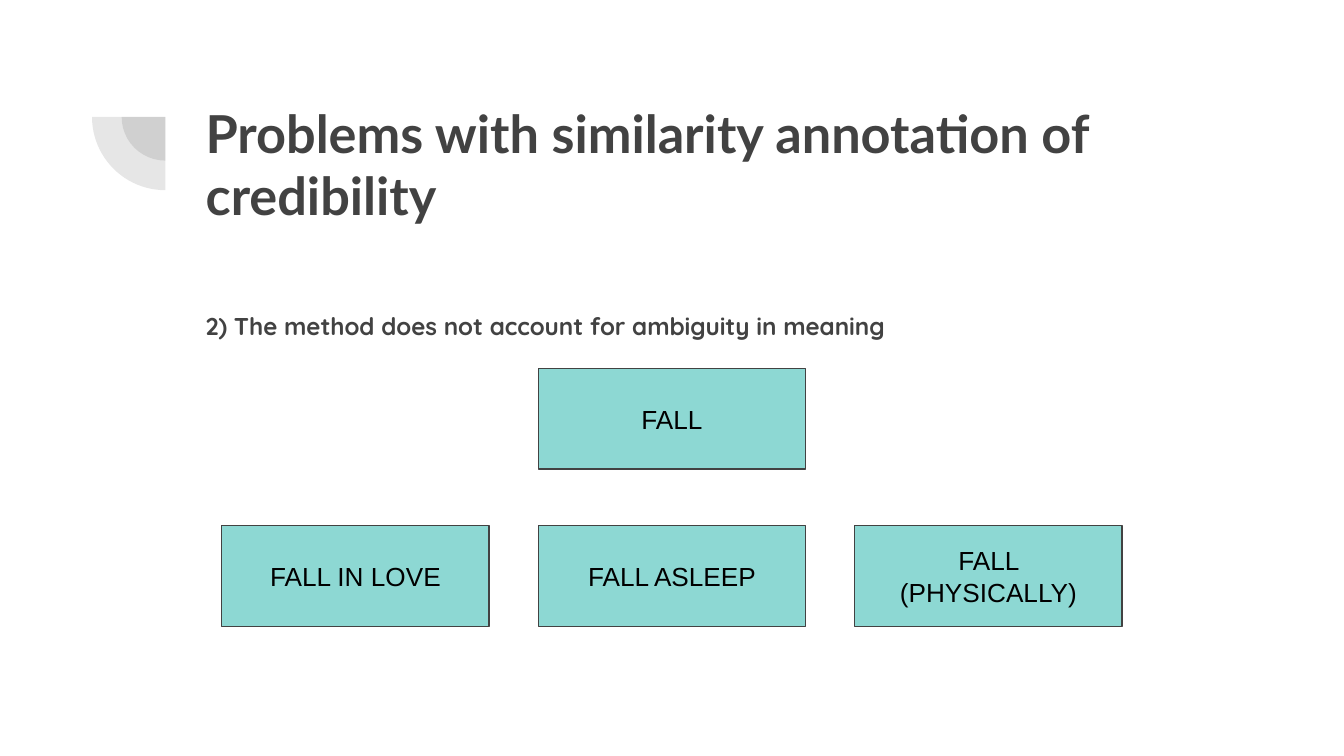
from pptx import Presentation
from pptx.dml.color import RGBColor
from pptx.enum.shapes import MSO_SHAPE as Shape
from pptx.enum.text import MSO_ANCHOR as Anchor, MSO_AUTO_SIZE as Fit, PP_ALIGN as Align
from pptx.oxml.ns import qn
from pptx.util import Inches, Pt
from lxml.etree import SubElement

TITLE = "Problems with similarity annotation of credibility"
POINT = "2) The method does not account for ambiguity in meaning"
WORD = "FALL"
SENSES = ["FALL IN LOVE", "FALL ASLEEP", "FALL (PHYSICALLY)"]

DARK, TEAL = "424242", "8DD8D3"
HEAD = {"name": "Lato", "size": Pt(28), "bold": True}
BODY = {"name": "Quicksand", "size": Pt(13), "bold": True}
LABEL = {"name": "Arial", "size": Pt(14)}

PAGE_W = 10
PAGE_H = PAGE_W * 9 / 16
LEFT, WIDTH = 1.43, 7.69
BOX_W, BOX_H = 1.99, 0.75
FIRST_X, LAST_X = 1.65, 6.36
STEP = (LAST_X - FIRST_X) / (len(SENSES) - 1)
WORD_Y, SENSE_Y = 2.74, 3.91
HUB_X, HUB_Y = 1.23, 0.87
PIES = [0.65, 1.09]


def paint(target, color):
    target.rgb = RGBColor.from_string(color)


def write(shape, text, font, color, align=Align.LEFT, anchor=Anchor.TOP):
    frame = shape.text_frame
    frame.text = text
    layout = {"word_wrap": True, "auto_size": Fit.NONE, "vertical_anchor": anchor}
    layout |= {f"margin_{side}": Inches(0.1) for side in ("left", "right", "top", "bottom")}
    for key, value in layout.items():
        setattr(frame, key, value)
    par = frame.paragraphs[0]
    par.alignment = align
    par.space_before = Pt(0)
    run = par.runs[0]
    for key, value in font.items():
        setattr(run.font, key, value)
    paint(run.font.color, color)
    return par


def place(shape, *spot):
    shape.left, shape.top, shape.width, shape.height = map(Inches, spot)


def add_pie(slide, size):
    """Add a see-through quarter disc, below and left of the hub."""
    pie = slide.shapes.add_shape(
        Shape.PIE, Inches(HUB_X - size / 2), Inches(HUB_Y - size / 2), Inches(size), Inches(size))
    pie.adjustments[0], pie.adjustments[1] = 108, 162
    pie.rotation = 270
    pie.shadow.inherit = False
    pie.line.fill.background()
    pie.fill.solid()
    paint(pie.fill.fore_color, DARK)
    tint = pie.fill._xPr.find(qn("a:solidFill"))[0]
    SubElement(tint, qn("a:alpha"), val="13000")


def add_box(slide, text, col, top):
    box = slide.shapes.add_shape(
        Shape.RECTANGLE, Inches(FIRST_X + col * STEP), Inches(top), Inches(BOX_W), Inches(BOX_H))
    box.shadow.inherit = False
    box.fill.solid()
    paint(box.fill.fore_color, TEAL)
    paint(box.line.color, DARK)
    box.line.width = Pt(0.75)
    write(box, text, LABEL, "000000", Align.CENTER, Anchor.MIDDLE)


def main():
    deck = Presentation()
    deck.slide_width, deck.slide_height = Inches(PAGE_W), Inches(PAGE_H)
    slide = deck.slides.add_slide(deck.slide_layouts[1])

    for size in PIES:
        add_pie(slide, size)

    title, body = slide.placeholders
    place(title, LEFT, 0.65, WIDTH, 1.09)
    write(title, TITLE, HEAD, DARK)
    place(body, LEFT, 2.18, WIDTH, 2.78)
    par = write(body, POINT, BODY, DARK)
    par.line_spacing = 1.15
    props = par._p.get_or_add_pPr()
    props.set("marL", "0")
    props.set("indent", "0")
    SubElement(props, qn("a:buNone"))

    add_box(slide, WORD, 1, WORD_Y)
    for col, sense in enumerate(SENSES):
        add_box(slide, sense, col, SENSE_Y)

    deck.save("out.pptx")


if __name__ == "__main__":
    main()
